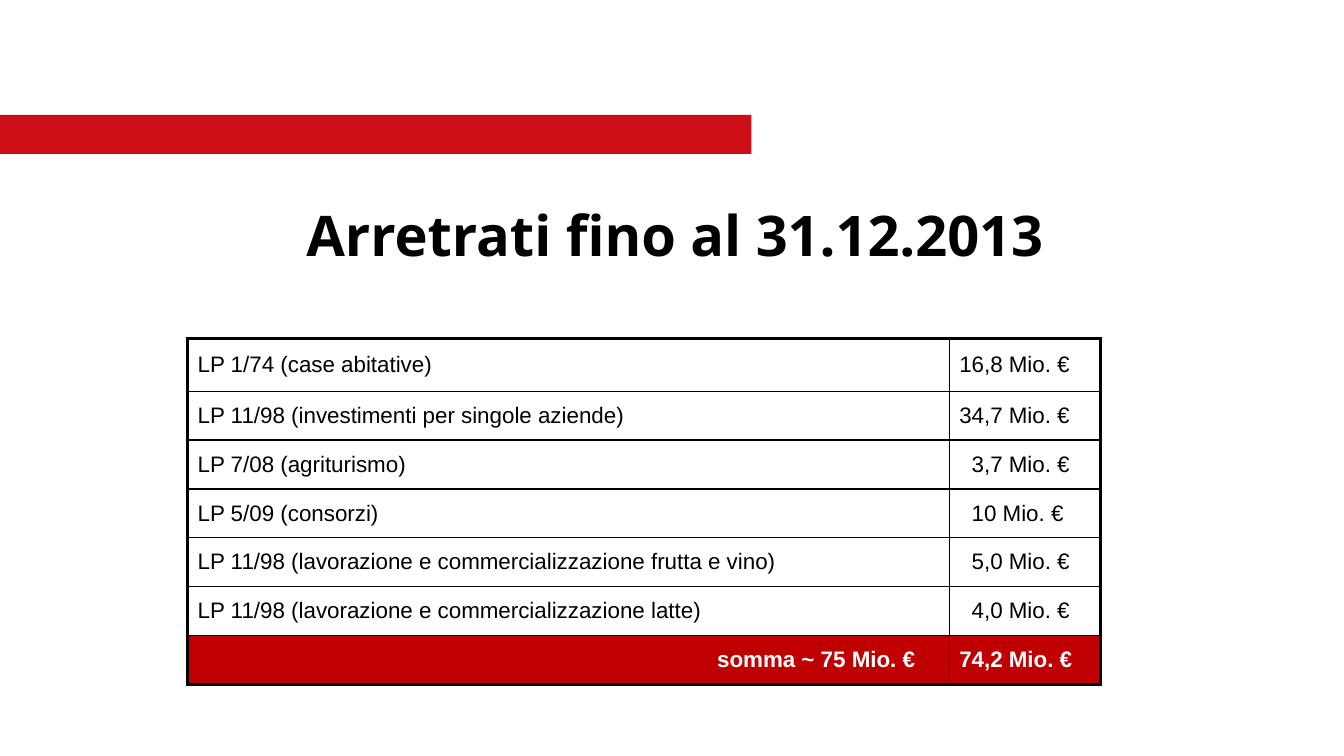
from dataclasses import dataclass

from lxml import etree
from pptx import Presentation
from pptx.dml.color import RGBColor
from pptx.enum import shapes, text
from pptx.oxml import ns
from pptx.util import Pt

BLACK, WHITE = "000000", "FFFFFF"
BAR_RED, SUM_RED = "CD0E16", "C00000"
THIN, THICK = 1, 2.25
MARGIN = 7.2
ALIGN = text.PP_ALIGN


@dataclass
class Entry:
    law: str
    amount: str
    amount_indent: float = 0
    is_sum: bool = False


ENTRIES = [
    Entry("LP 1/74 (case abitative)", "16,8 Mio. €"),
    Entry("LP 11/98 (investimenti per singole aziende)", "34,7 Mio. €"),
    Entry("LP 7/08 (agriturismo)", "3,7 Mio. €", 8.9),
    Entry("LP 5/09 (consorzi)", "10 Mio. €", 8.9),
    Entry("LP 11/98 (lavorazione e commercializzazione frutta e vino)", "5,0 Mio. €", 8.9),
    Entry("LP 11/98 (lavorazione e commercializzazione latte)", "4,0 Mio. €", 8.9),
    Entry("somma ~ 75 Mio. €", "74,2 Mio. €", is_sum=True),
]


def rgb(code: str) -> RGBColor:
    return RGBColor.from_string(code)


def write(frame, wording: str, font: str, size: float, color: str,
          bold: bool = False, align=ALIGN.LEFT) -> None:
    para = frame.paragraphs[0]
    para.alignment = align
    span = para.add_run()
    span.text = wording
    span.font.name = font
    span.font.size = Pt(size)
    span.font.bold = bold
    span.font.color.rgb = rgb(color)


def set_borders(cell, widths: dict[str, float]) -> None:
    """Draw black cell edges; widths runs in the order L, R, T, B."""
    properties = cell._tc.get_or_add_tcPr()
    for position, (side, width) in enumerate(widths.items()):
        line = etree.Element(ns.qn(f"a:ln{side}"), w=str(int(Pt(width))))
        fill = etree.SubElement(line, ns.qn("a:solidFill"))
        etree.SubElement(fill, ns.qn("a:srgbClr"), val=BLACK)
        properties.insert(position, line)


def add_bar(page) -> None:
    bar = page.shapes.add_shape(shapes.MSO_SHAPE.RECTANGLE,
                                Pt(-7.2), Pt(82), Pt(544), Pt(28))
    bar.shadow.inherit = False
    bar.fill.solid()
    bar.fill.fore_color.rgb = rgb(BAR_RED)
    bar.line.fill.background()


def set_title(page) -> None:
    title = page.shapes.title
    title.left, title.top, title.width, title.height = Pt(50), Pt(145), Pt(864), Pt(45)
    frame = title.text_frame
    frame.auto_size = text.MSO_AUTO_SIZE.NONE
    frame.vertical_anchor = text.MSO_ANCHOR.MIDDLE
    write(frame, "Arretrati fino al 31.12.2013", "Open Sans", 40, BLACK, True, ALIGN.CENTER)


def fill_cell(cell, entry: Entry, is_amount: bool) -> None:
    cell.vertical_anchor = text.MSO_ANCHOR.MIDDLE
    cell.margin_left = Pt(MARGIN + (entry.amount_indent if is_amount else 0))
    if entry.is_sum:
        cell.fill.solid()
        cell.fill.fore_color.rgb = rgb(SUM_RED)
    else:
        cell.fill.background()
    right_aligned = entry.is_sum and not is_amount
    if right_aligned:
        cell.margin_right = Pt(24.3)
    write(cell.text_frame, entry.amount if is_amount else entry.law, "Arial", 16,
          WHITE if entry.is_sum else BLACK, entry.is_sum,
          ALIGN.RIGHT if right_aligned else ALIGN.LEFT)


def add_arrears_table(page) -> None:
    table = page.shapes.add_table(len(ENTRIES), 2, Pt(134), Pt(242),
                                  Pt(652), Pt(247)).table
    table.first_row = table.horz_banding = False
    for column, width in zip(table.columns, (544, 108)):
        column.width = Pt(width)
    last = len(ENTRIES) - 1
    for index, entry in enumerate(ENTRIES):
        table.rows[index].height = Pt(34.93 if index else 37.4)
        for is_amount in (False, True):
            cell = table.cell(index, int(is_amount))
            fill_cell(cell, entry, is_amount)
            set_borders(cell, {
                "L": THIN if is_amount else THICK,
                "R": THICK if is_amount else THIN,
                "T": THIN if index else THICK,
                "B": THICK if index == last else THIN,
            })


def main() -> None:
    deck = Presentation()
    deck.slide_width, deck.slide_height = Pt(960), Pt(540)
    page = deck.slides.add_slide(deck.slide_layouts.get_by_name("Title Only"))
    add_bar(page)
    set_title(page)
    add_arrears_table(page)
    deck.save("out.pptx")


if __name__ == "__main__":
    main()
